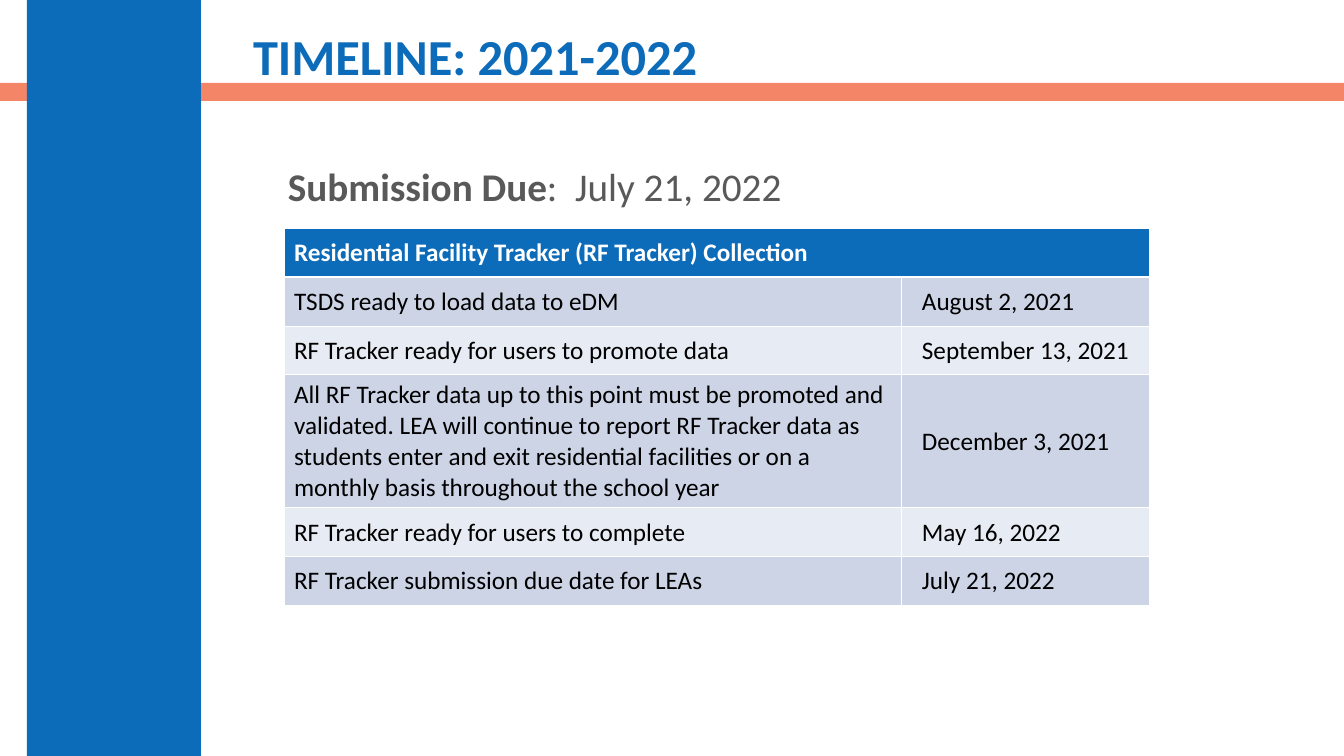
from dataclasses import dataclass

from lxml.etree import SubElement
from pptx import Presentation
from pptx.dml.color import RGBColor
from pptx.enum.shapes import MSO_SHAPE as Shape
from pptx.enum.text import MSO_ANCHOR as Anchor, PP_ALIGN as Align
from pptx.oxml.ns import qn
from pptx.util import Emu, Pt

W, H = 1344, 756
EMU_PER_PX = 12192000 / W
FONT = "Calibri"
BLUE, CORAL, GREY = "0D6CB9", "F16038", "595959"
WHITE, BLACK = "FFFFFF", "000000"
ROW_FILLS = ("CCD4E6", "E7EBF3")


@dataclass
class Bar:
    x: int
    y: int
    w: int
    h: int
    color: str
    opacity: int = 100


@dataclass
class Milestone:
    task: str
    date: str
    height: int = 49


BARS = [
    Bar(0, 83, W, 18, CORAL, opacity=76),
    Bar(27, 0, 174, H, BLUE),
]
HEADING = "Residential Facility Tracker (RF Tracker) Collection"
HEADING_HEIGHT = 49
COLUMN_WIDTHS = (617, 248)
MILESTONES = [
    Milestone("TSDS ready to load data to eDM", "August 2, 2021"),
    Milestone("RF Tracker ready for users to promote data", "September 13, 2021"),
    Milestone(
        "All RF Tracker data up to this point must be promoted and validated. "
        "LEA will continue to report RF Tracker data as students enter and exit "
        "residential facilities or on a monthly basis throughout the school year",
        "December 3, 2021", height=133),
    Milestone("RF Tracker ready for users to complete", "May 16, 2022"),
    Milestone("RF Tracker submission due date for LEAs", "July 21, 2022"),
]


def px(n: int) -> Emu:
    return Emu(round(n * EMU_PER_PX))


def rgb(color: str) -> RGBColor:
    return RGBColor.from_string(color)


def style(r, size: int, color: str, bold: bool = False) -> None:
    r.font.name = FONT
    r.font.size = Pt(size)
    r.font.bold = bold
    r.font.color.rgb = rgb(color)


def add_bar(s, bar: Bar) -> None:
    sp = s.shapes.add_shape(Shape.RECTANGLE, px(bar.x), px(bar.y), px(bar.w), px(bar.h))
    sp.shadow.inherit = False
    sp.line.fill.background()
    sp.fill.solid()
    sp.fill.fore_color.rgb = rgb(bar.color)
    if bar.opacity < 100:
        color = sp.element.spPr.find(qn("a:solidFill"))[0]
        SubElement(color, qn("a:alpha"), val=str(bar.opacity * 1000))


def set_title(s, text: str) -> None:
    title = s.shapes.title
    title.left, title.top, title.width, title.height = px(243), px(18), px(1061), px(83)
    tf = title.text_frame
    tf.text = text
    tf.vertical_anchor = Anchor.MIDDLE
    p = tf.paragraphs[0]
    p.alignment = Align.LEFT
    p.line_spacing = 0.9
    style(p.runs[0], 36, BLUE, bold=True)
    s.shapes.element.append(title.element)  # in front of the bars


def add_due_date(s, label: str, date: str) -> None:
    tf = s.shapes.add_textbox(px(278), px(163), px(956), px(54)).text_frame
    tf.word_wrap = True
    p = tf.paragraphs[0]
    p.line_spacing = 0.9
    for text, bold in ((label, True), (date, False)):
        r = p.add_run()
        r.text = text
        style(r, 28, GREY, bold)


def set_cell(cell, text: str, fill: str, color: str = BLACK, bold: bool = False,
             top: float = 0.72, bottom: float = 0.72) -> None:
    cell.text = text
    cell.vertical_anchor = Anchor.MIDDLE
    style(cell.text_frame.paragraphs[0].runs[0], 18, color, bold)
    add_borders(cell, top, bottom)
    cell.fill.solid()
    cell.fill.fore_color.rgb = rgb(fill)


def add_borders(cell, top: float, bottom: float) -> None:
    tc_pr = cell._tc.get_or_add_tcPr()
    for side, width in (("L", 0.72), ("R", 0.72), ("T", top), ("B", bottom)):
        ln = SubElement(tc_pr, qn(f"a:ln{side}"), w=str(Pt(width)))
        SubElement(SubElement(ln, qn("a:solidFill")), qn("a:srgbClr"), val=WHITE)


def add_timeline(s) -> None:
    heights = [HEADING_HEIGHT] + [m.height for m in MILESTONES]
    table = s.shapes.add_table(len(heights), len(COLUMN_WIDTHS), px(284), px(228),
                               px(sum(COLUMN_WIDTHS)), px(sum(heights))).table
    for column, width in zip(table.columns, COLUMN_WIDTHS):
        column.width = px(width)
    for row, height in zip(table.rows, heights):
        row.height = px(height)

    # Heading across both columns
    heading = table.cell(0, 0)
    heading.merge(table.cell(0, 1))
    set_cell(heading, HEADING, BLUE, WHITE, bold=True, bottom=2.16)

    # One row per milestone
    for i, m in enumerate(MILESTONES):
        fill = ROW_FILLS[i % 2]
        top = 2.16 if i == 0 else 0.72
        task, date = table.cell(i + 1, 0), table.cell(i + 1, 1)
        set_cell(task, m.task, fill, top=top)
        set_cell(date, m.date, fill, top=top)
        date.margin_left = px(21)


def main() -> None:
    prs = Presentation()
    prs.slide_width, prs.slide_height = px(W), px(H)
    s = prs.slides.add_slide(prs.slide_layouts.get_by_name("Title Only"))
    for bar in BARS:
        add_bar(s, bar)
    set_title(s, "TIMELINE: 2021-2022")
    add_due_date(s, "Submission Due", ":  July 21, 2022")
    add_timeline(s)
    prs.save("out.pptx")


if __name__ == "__main__":
    main()
